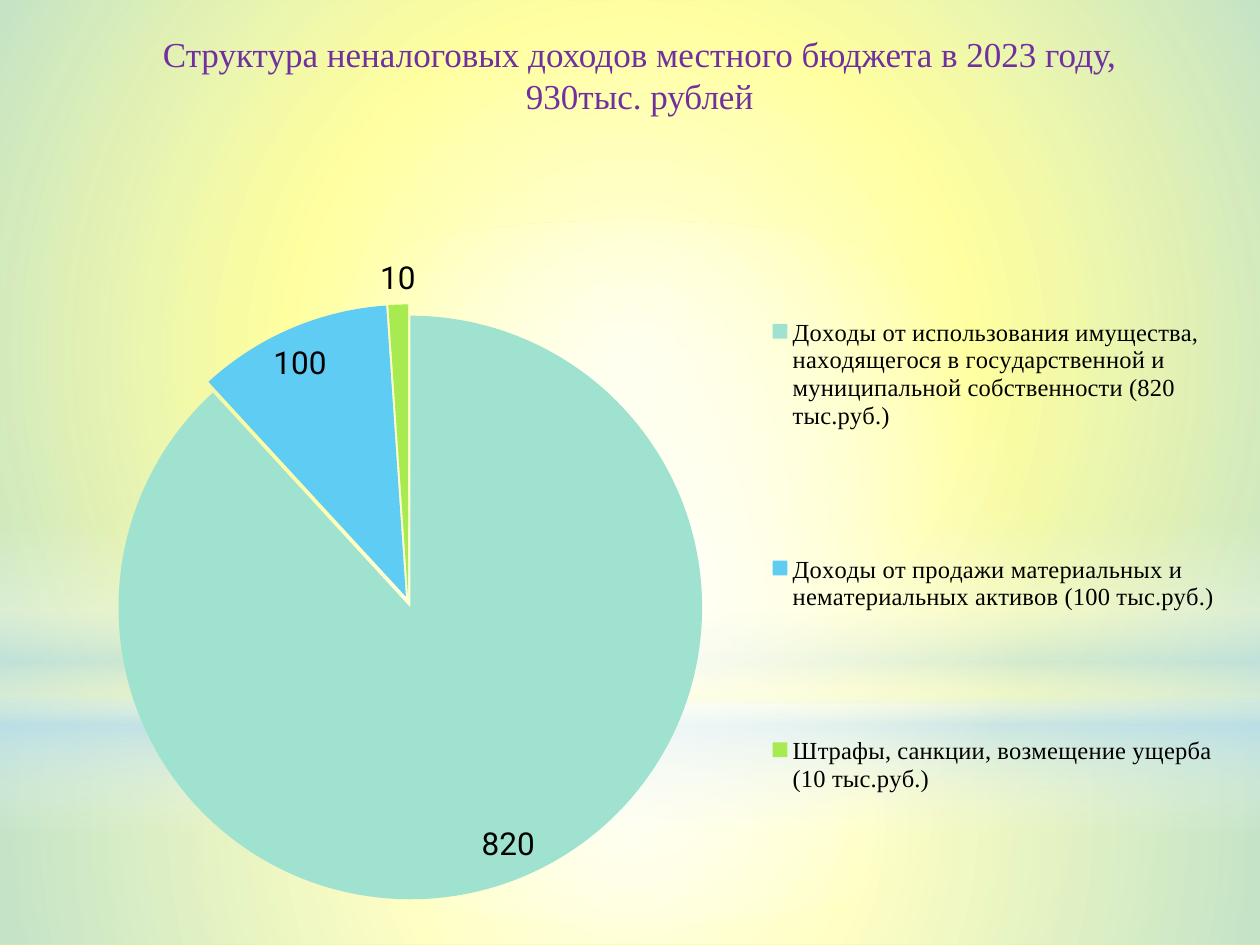
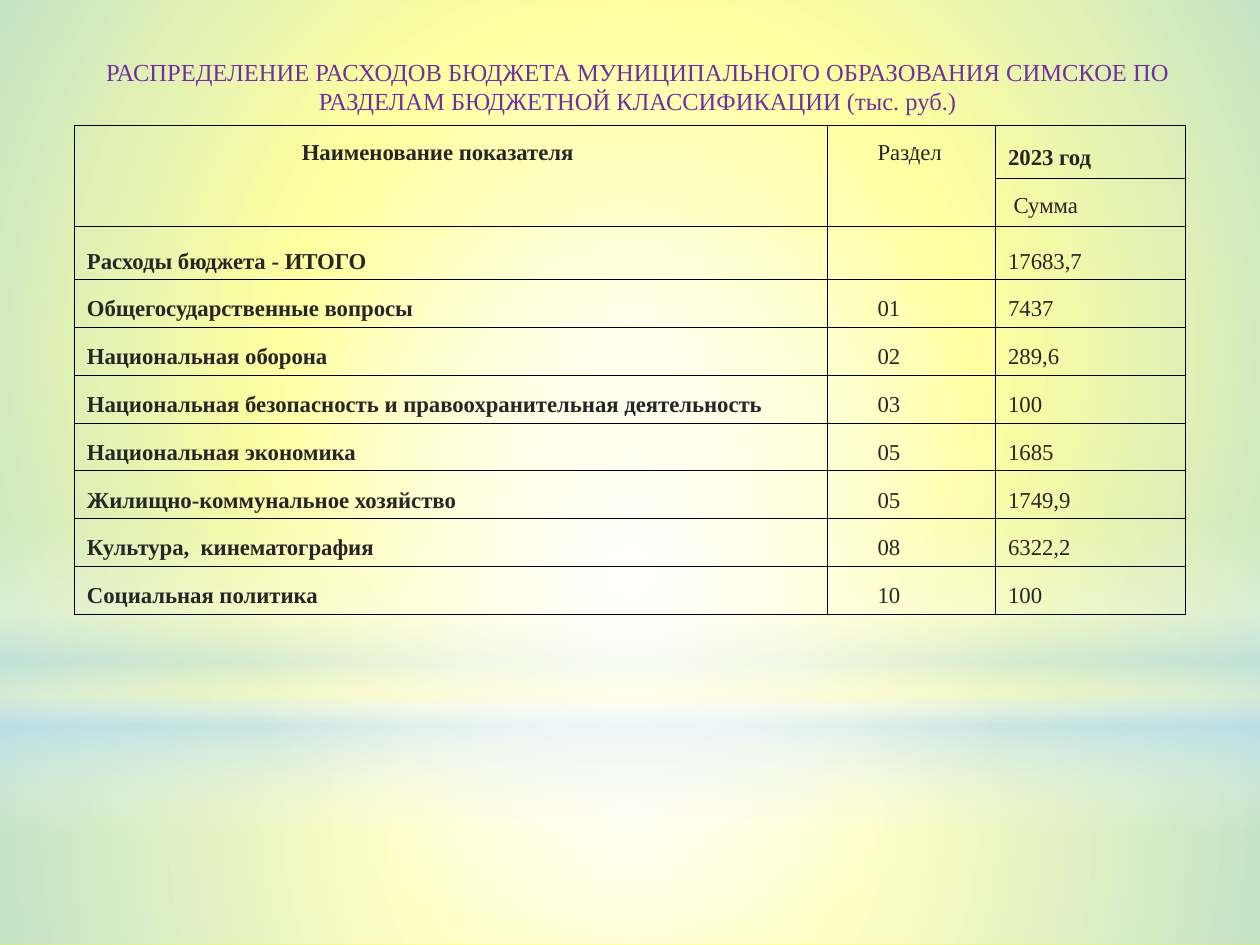
"""Builds two budget slides: a pie of non-tax income and a table of spending."""
from lxml.etree import SubElement
from pptx import Presentation
from pptx.chart.data import CategoryChartData as ChartData
from pptx.dml.color import RGBColor
from pptx.enum.chart import XL_CHART_TYPE as Kind, XL_LABEL_POSITION as Spot
from pptx.enum.chart import XL_LEGEND_POSITION as Side
from pptx.enum.shapes import MSO_CONNECTOR as Link, MSO_SHAPE as Form
from pptx.enum.text import MSO_ANCHOR as Anchor, PP_ALIGN as Align
from pptx.oxml import parse_xml
from pptx.oxml.ns import nsdecls, qn
from pptx.util import Pt

SERIF, SANS = "Times New Roman", "Roboto"
PURPLE, DARK, BLACK = "7030A0", "262626", "000000"
WHITE, SKY, YELLOW = "FFFFFF", "B4DCFA", "FFFF00"
ROUND = ('<a:path path="circle"><a:fillToRect l="50000" t="50000" '
         'r="50000" b="50000"/></a:path>')
DOWN = '<a:lin ang="5400000" scaled="0"/>'

GLOWS = [
    (Form.RECTANGLE, (0, 402, 720, 138), ROUND,
     [(0, WHITE, 91), (37, WHITE, 76), (100, SKY, 79)]),
    (Form.RECTANGLE, (0, 0, 720, 402), ROUND,
     [(0, WHITE, 89), (48, WHITE, 62), (100, SKY, 79)]),
    (Form.RECTANGLE, (0, 297, 720, 180), DOWN,
     [(0, WHITE, 0), (29, WHITE, 30), (45, SKY, 40),
      (55, WHITE, 26), (65, SKY, 60), (100, WHITE, 0)]),
    (Form.OVAL, (0, 126, 720, 402), ROUND,
     [(0, WHITE, 100), (56, WHITE, 0)]),
]

INCOME = [
    ("Доходы от использования имущества, находящегося в государственной "
     "и муниципальной собственности (820 тыс.руб.)", 820, "9EE2CF"),
    ("Доходы от продажи материальных и нематериальных активов "
     "(100 тыс.руб.)", 100, "5ECCF3"),
    ("Штрафы, санкции, возмещение ущерба (10 тыс.руб.)", 10, "A7EA52"),
]

COSTS = [
    ("Расходы бюджета - ИТОГО", "", "17683,7"),
    ("Общегосударственные вопросы", "01", "7437"),
    ("Национальная оборона", "02", "289,6"),
    ("Национальная безопасность и правоохранительная деятельность",
     "03", "100"),
    ("Национальная экономика", "05", "1685"),
    ("Жилищно-коммунальное хозяйство", "05", "1749,9"),
    ("Культура,  кинематография", "08", "6322,2"),
    ("Социальная политика", "10", "100"),
]


def tint(code):
    """Turn a hex string into a colour."""
    return RGBColor.from_string(code)


def place(box):
    """Turn a box in points into lengths."""
    return [Pt(n) for n in box]


def style(font, name, size, code, bold=None):
    """Set the look of a font."""
    font.name, font.size, font.bold = name, Pt(size), bold
    font.color.rgb = tint(code)


def glow(slide, form, box, way, stops):
    """Add a shape with a see-through gradient."""
    shape = slide.shapes.add_shape(form, *place(box))
    shape.shadow.inherit = False
    shape.line.fill.background()
    marks = "".join(
        f'<a:gs pos="{pos * 1000}"><a:srgbClr val="{code}">'
        f'<a:alpha val="{alpha * 1000}"/></a:srgbClr></a:gs>'
        for pos, code, alpha in stops)
    fill = parse_xml(f'<a:gradFill {nsdecls("a")} rotWithShape="1">'
                     f'<a:gsLst>{marks}</a:gsLst>{way}</a:gradFill>')
    shape._element.spPr.find(qn("a:prstGeom")).addnext(fill)


def base(deck):
    """Add a blank slide with the shared backdrop."""
    slide = deck.slides.add_slide(deck.slide_layouts[6])
    back = slide.background.fill
    back.solid()
    back.fore_color.rgb = tint(YELLOW)
    for parts in GLOWS:
        glow(slide, *parts)
    return slide


def title(slide, box, text, size, anchor):
    """Add a centred purple title."""
    frame = slide.shapes.add_textbox(*place(box)).text_frame
    frame.word_wrap = True
    frame.vertical_anchor = anchor
    frame.text = text
    para = frame.paragraphs[0]
    para.alignment = Align.CENTER
    style(para.font, SERIF, size, PURPLE)


def layout(host, inner, **sizes):
    """Build a manual layout for a plot or a legend."""
    target = '<c:layoutTarget val="inner"/>' if inner else ""
    marks = "".join(f'<c:{key} val="{val}"/>' for key, val in sizes.items())
    node = parse_xml(
        f'<c:layout {nsdecls("c")}><c:manualLayout>{target}'
        f'<c:xMode val="edge"/><c:yMode val="edge"/>{marks}'
        '</c:manualLayout></c:layout>')
    for old in host.findall(qn("c:layout")):
        host.remove(old)
    if inner:
        host.insert(0, node)
    else:
        host.find(qn("c:legendPos")).addnext(node)


def pie(slide, box):
    """Add the income pie with its legend."""
    data = ChartData()
    data.categories = [name for name, _, _ in INCOME]
    data.add_series("Series 1", [val for _, val, _ in INCOME])
    chart = slide.shapes.add_chart(Kind.PIE, *place(box), data).chart
    chart.has_title = False
    style(chart.font, SANS, 18, BLACK)

    chart.has_legend = True
    key = chart.legend
    key.position, key.include_in_layout = Side.RIGHT, False
    style(key.font, SERIF, 14, BLACK)
    layout(key._element, False, x=0.61, y=0, w=0.39, h=1)

    plot = chart.plots[0]
    plot.vary_by_categories = True
    layout(chart._chartSpace.chart.plotArea, True,
           x=0.016, y=0.154, w=0.595, h=0.819)
    plot.has_data_labels = True
    tags = plot.data_labels
    tags.show_value, tags.show_percentage = True, False
    tags.position = Spot.BEST_FIT
    style(tags.font, SANS, 18, BLACK)

    row = plot.series[0]
    for num, (_, _, code) in enumerate(INCOME):
        fill = row.points[num].format.fill
        fill.solid()
        fill.fore_color.rgb = tint(code)
    burst = parse_xml(f'<c:explosion {nsdecls("c")} val="2"/>')
    row._element.find(qn("c:dPt")).addprevious(burst)


def edge(cell):
    """Draw thin black borders round a cell."""
    props = cell._tc.get_or_add_tcPr()
    for num, side in enumerate(("lnL", "lnR", "lnT", "lnB")):
        line = parse_xml(
            f'<a:{side} {nsdecls("a")} w="762"><a:solidFill>'
            f'<a:srgbClr val="{BLACK}"/></a:solidFill></a:{side}>')
        props.insert(num, line)


def write(cell, text, left=7.2, top=11.5, bold=False, anchor=Anchor.BOTTOM):
    """Fill a cell with one line of text."""
    cell.margin_left, cell.margin_top = Pt(left), Pt(top)
    cell.vertical_anchor = anchor
    cell.text = text
    para = cell.text_frame.paragraphs[0]
    para.line_spacing = 0.78
    style(para.font, SERIF, 13, DARK, bold)


def table(slide, box):
    """Add the spending table with its two-row head."""
    count = len(COSTS) + 2
    grid = slide.shapes.add_table(count, 3, *place(box)).table
    grid.first_row = grid.horz_banding = False
    for col, width in zip(grid.columns, (430, 96.4, 108.6)):
        col.width = Pt(width)
    for num, row in enumerate(grid.rows):
        row.height = Pt(26.8 if num else 29.7)
        for cell in row.cells:
            cell.fill.background()
            edge(cell)
    for col in (0, 1):
        grid.cell(0, col).merge(grid.cell(1, col))

    top = Anchor.TOP
    write(grid.cell(0, 0), "Наименование показателя", 130, bold=True,
          anchor=top)
    write(grid.cell(0, 1), "Раздел", 29, anchor=top)
    write(grid.cell(0, 2), "2023 год", top=14.4, bold=True, anchor=top)
    write(grid.cell(1, 2), "Сумма", 10.4, anchor=top)
    for num, (name, part, total) in enumerate(COSTS, 2):
        write(grid.cell(num, 0), name, bold=True)
        write(grid.cell(num, 1), part, 29)
        write(grid.cell(num, 2), total)


def dot(slide, x, y):
    """Add the tiny purple stroke over the table head."""
    ends = place((x, y, x, y + 0.7))
    line = slide.shapes.add_connector(Link.STRAIGHT, *ends)
    line.line.width = Pt(2)
    line.line.color.rgb = tint("83297F")
    SubElement(line._element.spPr, qn("a:effectLst"))


def main():
    """Build and save the deck."""
    deck = Presentation()
    deck.slide_width, deck.slide_height = Pt(720), Pt(540)

    slide = base(deck)
    pie(slide, (20, 110, 680.4, 415.4))
    title(slide, (31, 15, 669, 55.4),
          "Структура неналоговых доходов местного бюджета в 2023 году,\v"
          "930тыс. рублей", 20, Anchor.TOP)

    slide = base(deck)
    title(slide, (30, 14.4, 669, 70),
          "РАСПРЕДЕЛЕНИЕ РАСХОДОВ БЮДЖЕТА МУНИЦИПАЛЬНОГО ОБРАЗОВАНИЯ "
          "СИМСКОЕ ПО РАЗДЕЛАМ БЮДЖЕТНОЙ КЛАССИФИКАЦИИ (тыс. руб.)",
          14, Anchor.MIDDLE)
    table(slide, (42.5, 71.4, 635, 270.9))
    dot(slide, 522.7, 84.2)

    deck.save("out.pptx")


if __name__ == "__main__":
    main()
